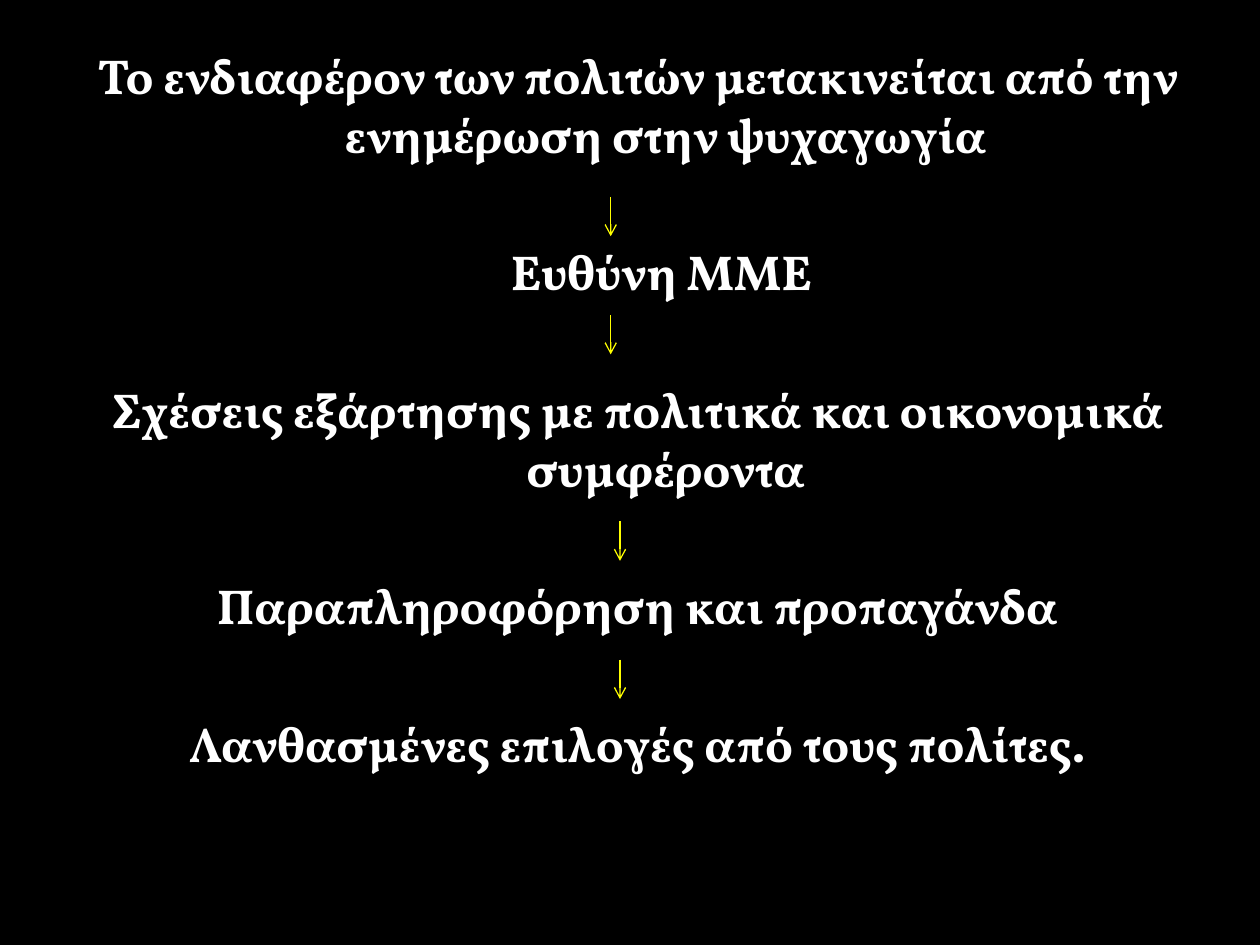
"""Build a slide with a chain of five statements linked by downward arrows."""
import pptx
import pptx.dml.color
import pptx.enum.shapes
import pptx.enum.text
import pptx.oxml.ns
import pptx.util
import lxml.etree

Pt = pptx.util.Pt
qn = pptx.oxml.ns.qn
RGBColor = pptx.dml.color.RGBColor
COLORS = {"background": "000000", "text": "FFFFFF", "arrow": "FFFF00"}
HANGING = -32.4
STATEMENTS = [
    ("Το ενδιαφέρον των πολιτών μετακινείται από την ενημέρωση στην ψυχαγωγία", HANGING, 5.6),
    ("Ευθύνη ΜΜΕ", -5, 45),
    ("Σχέσεις εξάρτησης με πολιτικά και οικονομικά συμφέροντα", HANGING, 45),
    ("Παραπληροφόρηση και προπαγάνδα", HANGING, 45),
    ("Λανθασμένες επιλογές από τους πολίτες.", HANGING, 45),
]
ARROWS = [(349, 112.5), (349, 180), (354.3, 298), (354.3, 377)]
ARROW_LENGTH = 22.5

deck = pptx.Presentation()
deck.slide_width, deck.slide_height = Pt(720), Pt(540)
page = deck.slides.add_slide(deck.slide_layouts[1])
page.background.fill.solid()
page.background.fill.fore_color.rgb = RGBColor.from_string(COLORS["background"])
title = page.shapes.title.element
title.getparent().remove(title)

body = page.placeholders[1]
body.left, body.top, body.width, body.height = Pt(33.8), Pt(22.3), Pt(650), Pt(474.5)
frame = body.text_frame
frame.word_wrap = True
frame.auto_size = pptx.enum.text.MSO_AUTO_SIZE.NONE
frame.vertical_anchor = pptx.enum.text.MSO_ANCHOR.TOP
for index, (statement, indent, space) in enumerate(STATEMENTS):
    para = frame.paragraphs[0] if index == 0 else frame.add_paragraph()
    para.alignment = pptx.enum.text.PP_ALIGN.CENTER
    para.space_before = Pt(space)
    properties = para._p.get_or_add_pPr()
    properties.set("marL", str(Pt(43.2)))
    properties.set("indent", str(Pt(indent)))
    lxml.etree.SubElement(properties, qn("a:buNone"))
    span = para.add_run()
    span.text = statement
    span.font.name = "Vollkorn"
    span.font.size = Pt(28)
    span.font.bold = True
    span.font.color.rgb = RGBColor.from_string(COLORS["text"])

for x, y in ARROWS:
    arrow = page.shapes.add_connector(
        pptx.enum.shapes.MSO_CONNECTOR.STRAIGHT, Pt(x), Pt(y), Pt(x), Pt(y + ARROW_LENGTH)
    )
    arrow.line.width = Pt(0.75)
    arrow.line.color.rgb = RGBColor.from_string(COLORS["arrow"])
    outline = arrow.line._get_or_add_ln()
    lxml.etree.SubElement(outline, qn("a:tailEnd"), type="arrow")
    lxml.etree.SubElement(arrow.element.spPr, qn("a:effectLst"))

deck.save("out.pptx")
